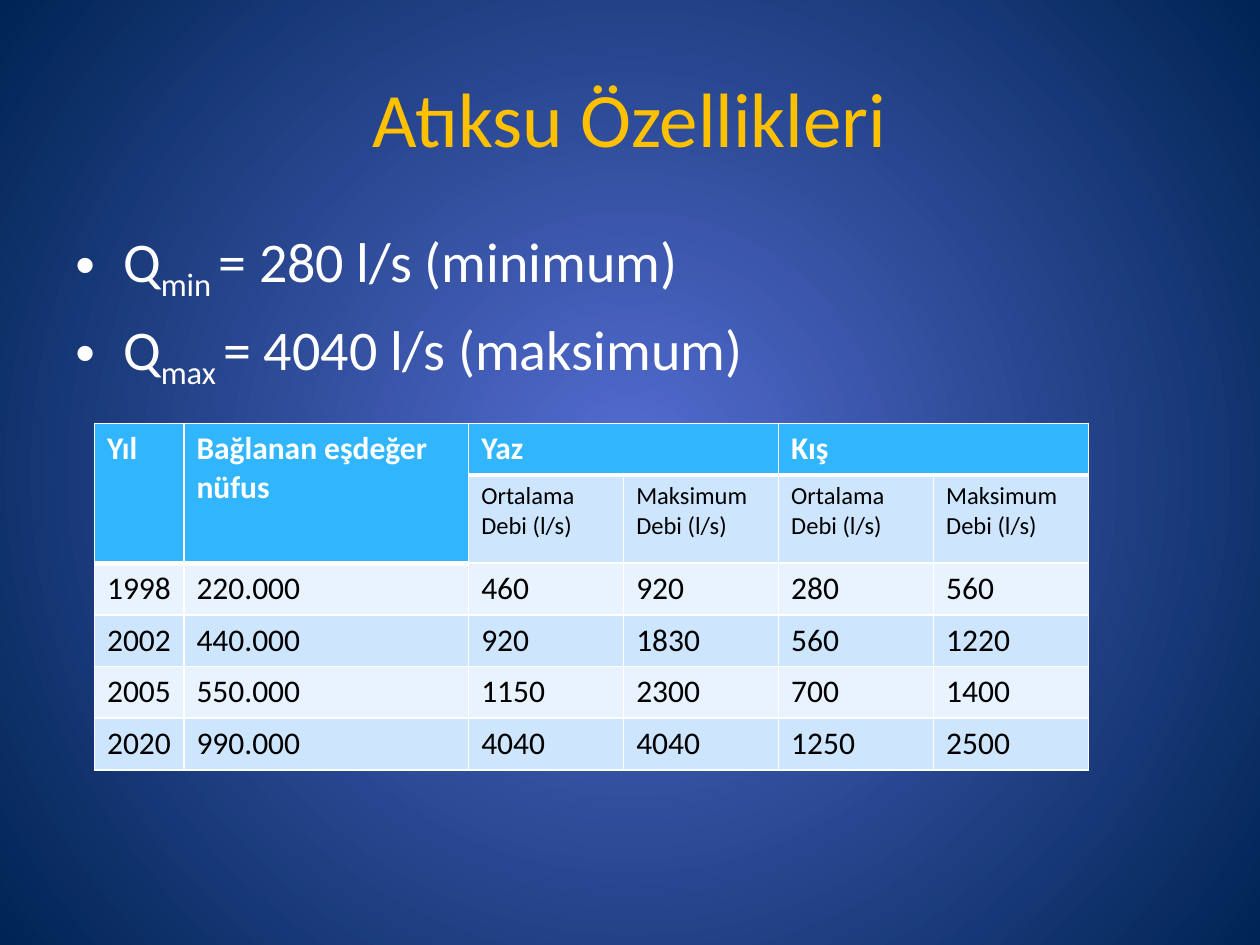
from typing import NamedTuple

from lxml import etree
from pptx import Presentation
from pptx import util as u
from pptx.dml.color import RGBColor
from pptx.enum import text
from pptx.oxml.ns import qn

FONT = "Calibri"
WHITE, BLACK, GOLD = "FFFFFF", "000000", "FFC000"
HEADER, BAND_DARK, BAND_LIGHT = "31B6FD", "CEE5FE", "E8F3FF"


class Flow(NamedTuple):
    sub: str
    value: str


class Merge(NamedTuple):
    first: tuple[int, int]
    last: tuple[int, int]


FLOWS = [Flow("min ", "= 280 l/s (minimum)"), Flow("max ", "= 4040 l/s (maksimum)")]
MERGES = [
    Merge((0, 0), (1, 0)),
    Merge((0, 1), (1, 1)),
    Merge((0, 2), (0, 3)),
    Merge((0, 4), (0, 5)),
]
ROWS = [
    ["Yıl", "Bağlanan eşdeğer nüfus", "Yaz", "", "Kış", ""],
    ["", ""] + ["Ortalama Debi (l/s)", "Maksimum Debi (l/s)"] * 2,
    ["1998", "220.000", "460", "920", "280", "560"],
    ["2002", "440.000", "920", "1830", "560", "1220"],
    ["2005", "550.000", "1150", "2300", "700", "1400"],
    ["2020", "990.000", "4040", "4040", "1250", "2500"],
]
COLUMN_WIDTHS = [0.71, 2.26] + [1.23] * 4
ROW_HEIGHTS = [0.41, 0.54] + [0.41] * 4


def rgb(value: str) -> RGBColor:
    return RGBColor.from_string(value)


def child(parent, tag: str, **attrs: str):
    return etree.SubElement(parent, qn(tag), attrs)


def add_run(p, content: str, *, size: float, color: str = WHITE,
            bold: bool = False, baseline: int = 0) -> None:
    r = p.add_run()
    r.text = content
    r.font.name, r.font.size, r.font.bold = FONT, u.Pt(size), bold
    r.font.color.rgb = rgb(color)
    if baseline:
        r.font._element.set("baseline", str(baseline * 1000))


def add_frame(s, left: float, top: float, width: float, height: float, anchor):
    sp = s.shapes.add_textbox(*map(u.Inches, (left, top, width, height)))
    tf = sp.text_frame
    tf.word_wrap, tf.vertical_anchor = True, anchor
    return tf


def set_background(s) -> None:
    fill = s.background.fill
    fill.gradient()
    for stop, position, color in zip(fill.gradient_stops, (0, 1), ("556DD2", "002454")):
        stop.position, stop.color.rgb = position, rgb(color)
    grad = s.background._cSld.find(".//" + qn("a:gradFill"))
    grad.remove(grad.find(qn("a:lin")))
    circle = child(grad, "a:path", path="circle")
    child(circle, "a:fillToRect", **dict.fromkeys("ltrb", "50000"))


def add_flow(p, flow: Flow) -> None:
    pPr = p._p.get_or_add_pPr()
    indent = u.Inches(0.38)
    pPr.set("marL", str(indent))
    pPr.set("indent", str(-indent))
    child(child(pPr, "a:spcBef"), "a:spcPct", val="20000")
    child(pPr, "a:buFont", typeface="Arial")
    child(pPr, "a:buChar", char="•")
    add_run(p, "Q", size=32)
    add_run(p, flow.sub, size=32, baseline=-25)
    add_run(p, flow.value, size=32)


def is_header(row: int, col: int) -> bool:
    return row == 0 or (row == 1 and col < 2)


def set_borders(cell, top: float, bottom: float) -> None:
    tcPr = cell._tc.get_or_add_tcPr()
    for side, width in zip("LRTB", (1, 1, top, bottom)):
        ln = child(tcPr, f"a:ln{side}", w=str(u.Pt(width)))
        child(child(ln, "a:solidFill"), "a:srgbClr", val=WHITE)


def format_cell(cell, row: int, col: int) -> None:
    header = is_header(row, col)
    below_header = row > 0 and not header and is_header(row - 1, col)
    set_borders(cell, 3 if below_header else 1, 3 if header else 1)
    cell.fill.solid()
    band = BAND_DARK if row % 2 else BAND_LIGHT
    cell.fill.fore_color.rgb = rgb(HEADER if header else band)
    if ROWS[row][col]:
        add_run(cell.text_frame.paragraphs[0], ROWS[row][col],
                size=14 if row == 1 else 18,
                color=WHITE if header else BLACK, bold=header)


def add_flow_table(s) -> None:
    area = (0.75, 3.36, sum(COLUMN_WIDTHS), sum(ROW_HEIGHTS))
    table = s.shapes.add_table(len(ROWS), len(COLUMN_WIDTHS), *map(u.Inches, area)).table
    table.first_row = table.horz_banding = False
    for column, width in zip(table.columns, COLUMN_WIDTHS):
        column.width = u.Inches(width)
    for row, height in zip(table.rows, ROW_HEIGHTS):
        row.height = u.Inches(height)
    for merge in MERGES:
        table.cell(*merge.first).merge(table.cell(*merge.last))
    for row in range(len(ROWS)):
        for col in range(len(COLUMN_WIDTHS)):
            format_cell(table.cell(row, col), row, col)


def main() -> None:
    """Build the wastewater characteristics slide."""
    prs = Presentation()
    prs.slide_width, prs.slide_height = u.Inches(10), u.Inches(7.5)
    s = prs.slides.add_slide(prs.slide_layouts[6])
    set_background(s)

    title = add_frame(s, 0.5, 0.3, 9, 1.25, text.MSO_ANCHOR.MIDDLE).paragraphs[0]
    title.alignment = text.PP_ALIGN.CENTER
    add_run(title, "Atıksu Özellikleri", size=44, color=GOLD)

    tf = add_frame(s, 0.5, 1.75, 9, 4.95, text.MSO_ANCHOR.TOP)
    for i, flow in enumerate(FLOWS):
        add_flow(tf.add_paragraph() if i else tf.paragraphs[0], flow)

    add_flow_table(s)
    prs.save("out.pptx")


if __name__ == "__main__":
    main()
